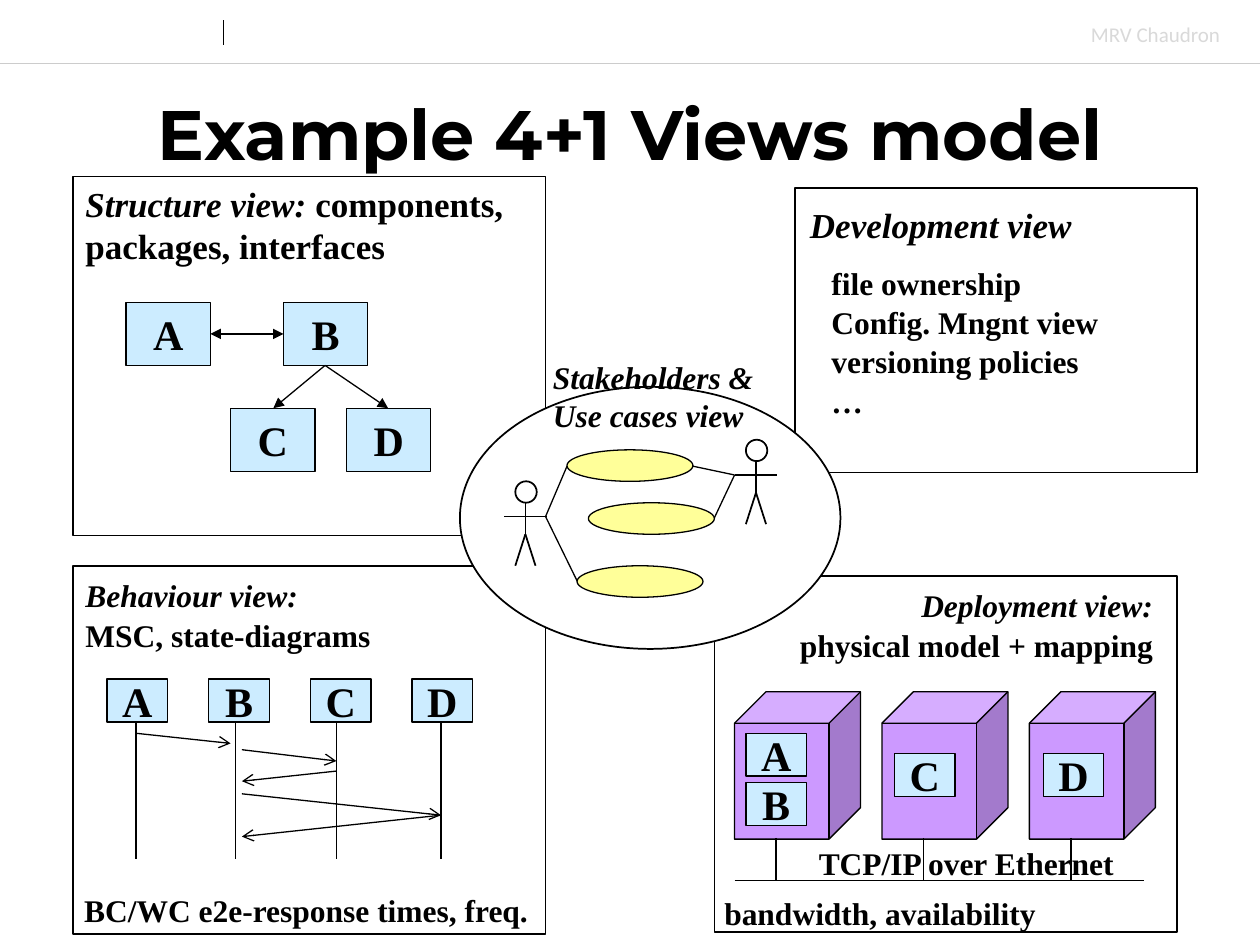
from lxml import etree
from pptx import Presentation
from pptx.dml.color import RGBColor
from pptx.enum import shapes, text
from pptx.oxml import ns
from pptx.util import Inches, Pt

BLACK = RGBColor(0x00, 0x00, 0x00)
WHITE = RGBColor(0xFF, 0xFF, 0xFF)
SKY = RGBColor(0xCC, 0xEC, 0xFF)
PURPLE = RGBColor(0xCC, 0x99, 0xFF)
YELLOW = RGBColor(0xFF, 0xFF, 0x99)
RULE_GREY = RGBColor(0xCC, 0xCC, 0xCC)
AUTHOR_GREY = RGBColor(0xD9, 0xD9, 0xD9)
SERIF = "Times New Roman"
KIND = shapes.MSO_SHAPE
ALIGN = text.PP_ALIGN
MIDDLE = text.MSO_ANCHOR.MIDDLE

# Content: boxes are (left, top, width, height); a line of text is a list of (words, italic)
TITLE = "Example 4+1 Views model"
AUTHOR = "MRV Chaudron"

PANELS = [  # box, opacity in percent
    ((0.58, 4.49, 3.75, 2.92), 100),  # behaviour
    ((5.67, 4.57, 3.67, 2.83), 100),  # deployment
    ((6.31, 1.49, 3.19, 2.26), 50),   # development
    ((0.58, 1.4, 3.75, 2.85), 100),   # structure
]
LISTS = [  # tightly set lines
    ((0.58, 4.63, 3.58, 0.61), ALIGN.LEFT,
     [[("Behaviour view:", True)], [("MSC, state-diagrams", False)]]),
    ((5.75, 4.71, 3.5, 0.61), ALIGN.RIGHT,
     [[("Deployment view:", True)], [("physical model + mapping", False)]]),
    ((6.5, 2.15, 2.58, 1.28), ALIGN.LEFT,
     [[(words, False)] for words in
      ("file ownership", "Config. Mngnt view", "versioning policies", "…")]),
]
HEADINGS = [
    ((0.58, 1.4, 3.67, 0.77),
     [[("Structure view: ", True), ("components, packages, interfaces", False)]]),
    ((6.33, 1.57, 3, 0.43), [[("Development view", True)]]),
]
LABELS = [
    ((4.29, 2.79, 1.79, 0.7), [[("Stakeholders &", True)], [("Use cases view", True)]]),
    ((0.57, 7.02, 3.74, 0.4), [[("BC/WC e2e-response times, freq.", False)]]),
    ((5.65, 7.05, 2.67, 0.4), [[("bandwidth, availability", False)]]),
    ((6.4, 6.65, 2.56, 0.4), [[("TCP/IP over Ethernet", False)]]),
]
COMPONENTS = {"A": (1, 2.4), "B": (2.25, 2.4), "C": (1.83, 3.24), "D": (2.75, 3.24)}
LIFELINES = {"A": 1.08, "B": 1.87, "C": 2.67, "D": 3.5}
MESSAGES = [  # x1, y1, x2, y2
    (1.08, 5.82, 1.83, 5.9), (1.92, 5.95, 2.67, 6.04), (2.67, 6.12, 1.92, 6.2),
    (1.92, 6.3, 3.5, 6.47), (3.5, 6.47, 1.92, 6.64),
]
NODES = [[("A", 5.82), ("B", 6.21)], [("C", 5.98)], [("D", 5.98)]]  # letter, top
ACTORS = [(4.17, 3.82), (6, 3.49)]  # centre, top of head
USE_CASES = [(4.5, 3.57), (4.67, 3.99), (4.58, 4.49)]
USES = [(4.33, 4.1, 4.5, 3.7), (5.83, 3.77, 5.5, 3.7),
        (4.33, 4.1, 4.58, 4.61), (5.83, 3.77, 5.67, 4.11)]

deck = Presentation()
deck.slide_width, deck.slide_height = Inches(10), Inches(7.5)
page = deck.slides.add_slide(deck.slide_layouts[5])


def write(frame, lines, size=18, font=SERIF, color=BLACK, bold=True, align=ALIGN.LEFT,
          anchor=text.MSO_ANCHOR.TOP, wrap=True, spacing=None, before=0):
    frame.word_wrap = wrap
    frame.vertical_anchor = anchor
    for index, line in enumerate(lines):
        para = frame.paragraphs[0] if index == 0 else frame.add_paragraph()
        para.alignment = align
        if spacing:
            para.line_spacing = spacing
        if index and before:
            para.space_before = Pt(before)
        for words, italic in line:
            span = para.add_run()
            span.text = words
            span.font.name, span.font.size = font, Pt(size)
            span.font.bold, span.font.italic = bold, italic
            span.font.color.rgb = color


def add_text(box, lines, **style):
    area = page.shapes.add_textbox(*map(Inches, box))
    write(area.text_frame, lines, **style)


def add_figure(kind, box, fill=None, width=0.75, opacity=100):
    figure = page.shapes.add_shape(kind, *map(Inches, box))
    figure.shadow.inherit = False
    figure.line.color.rgb, figure.line.width = BLACK, Pt(width)
    if fill is None:
        figure.fill.background()
    else:
        figure.fill.solid()
        figure.fill.fore_color.rgb = fill
    if opacity < 100:
        tone = figure.fill._xPr.find(".//" + ns.qn("a:srgbClr"))
        etree.SubElement(tone, ns.qn("a:alpha"), val=str(opacity * 1000))
    return figure


def add_letter(letter, box):
    figure = add_figure(KIND.RECTANGLE, box, SKY)
    write(figure.text_frame, [[(letter, False)]], size=24, align=ALIGN.CENTER,
          anchor=MIDDLE, wrap=False)


def add_line(x1, y1, x2, y2, color=BLACK, width=0.75, head=None, tail=None):
    line = page.shapes.add_connector(shapes.MSO_CONNECTOR.STRAIGHT,
                                     *map(Inches, (x1, y1, x2, y2)))
    line.line.color.rgb, line.line.width = color, Pt(width)
    for tag, arrow in (("a:headEnd", head), ("a:tailEnd", tail)):
        if arrow:
            etree.SubElement(line.line._get_or_add_ln(), ns.qn(tag), type=arrow)
    etree.SubElement(line._element.spPr, ns.qn("a:effectLst"))


def add_actor(x, y):
    add_figure(KIND.OVAL, (x - 0.08, y, 0.17, 0.17), width=1)
    hip = y + 0.42
    for limb in ((x, y + 0.17, x, hip), (x - 0.17, y + 0.28, x + 0.17, y + 0.28),
                 (x - 0.08, y + 0.67, x, hip), (x + 0.08, y + 0.67, x, hip)):
        add_line(*limb, width=1)


# Header and title
add_line(0, 0.5, 10, 0.5, color=RULE_GREY, width=0.25)
add_line(1.77, 0.16, 1.77, 0.36, width=0.5)
add_text((8.56, 0.12, 1.23, 0.3), [[(AUTHOR, False)]], size=12, font="Calibri",
         color=AUTHOR_GREY, bold=False, wrap=False)
title = page.shapes.title
title.left, title.top, title.width, title.height = map(Inches, (0, 0.49, 10, 1.12))
write(title.text_frame, [[(TITLE, False)]], size=40, font="Montserrat",
      align=ALIGN.CENTER, anchor=MIDDLE)

# Panels and the central ellipse
for box, opacity in PANELS:
    add_figure(KIND.RECTANGLE, box, WHITE, width=1, opacity=opacity)
add_figure(KIND.OVAL, (3.65, 3.07, 3.02, 2.08), WHITE, width=1)

# Structure view
for letter, (left, top) in COMPONENTS.items():
    add_letter(letter, (left, top, 0.67, 0.5))
add_line(1.67, 2.65, 2.25, 2.65, head="triangle", tail="triangle")
for x in (2.17, 3.08):
    add_line(2.58, 2.9, x, 3.24, tail="triangle")

# Behaviour view
for index, (letter, x) in enumerate(LIFELINES.items()):
    add_letter(letter, (0.85 + 0.807 * index, 5.39, 0.48, 0.34))
    add_line(x, 5.74, x, 6.82)
for message in MESSAGES:
    add_line(*message, tail="arrow")

# Deployment view
add_line(5.83, 6.99, 9.08, 6.99)
for index, letters in enumerate(NODES):
    left = 5.83 + 1.17 * index
    add_figure(KIND.CUBE, (left, 5.49, 1, 1.17), PURPLE)
    add_line(left + 0.33, 6.65, left + 0.33, 6.99)
    for letter, top in letters:
        add_letter(letter, (5.92 + 1.18 * index, top, 0.48, 0.34))

# Use cases view
for actor in ACTORS:
    add_actor(*actor)
for left, top in USE_CASES:
    add_figure(KIND.OVAL, (left, top, 1, 0.25), YELLOW)
for use in USES:
    add_line(*use)

# Texts
for box, align, lines in LISTS:
    add_text(box, lines, align=align, spacing=0.6, before=9.5)
for box, lines in HEADINGS:
    add_text(box, lines, size=20, anchor=MIDDLE)
for box, lines in LABELS:
    add_text(box, lines, wrap=False)

deck.save("out.pptx")
